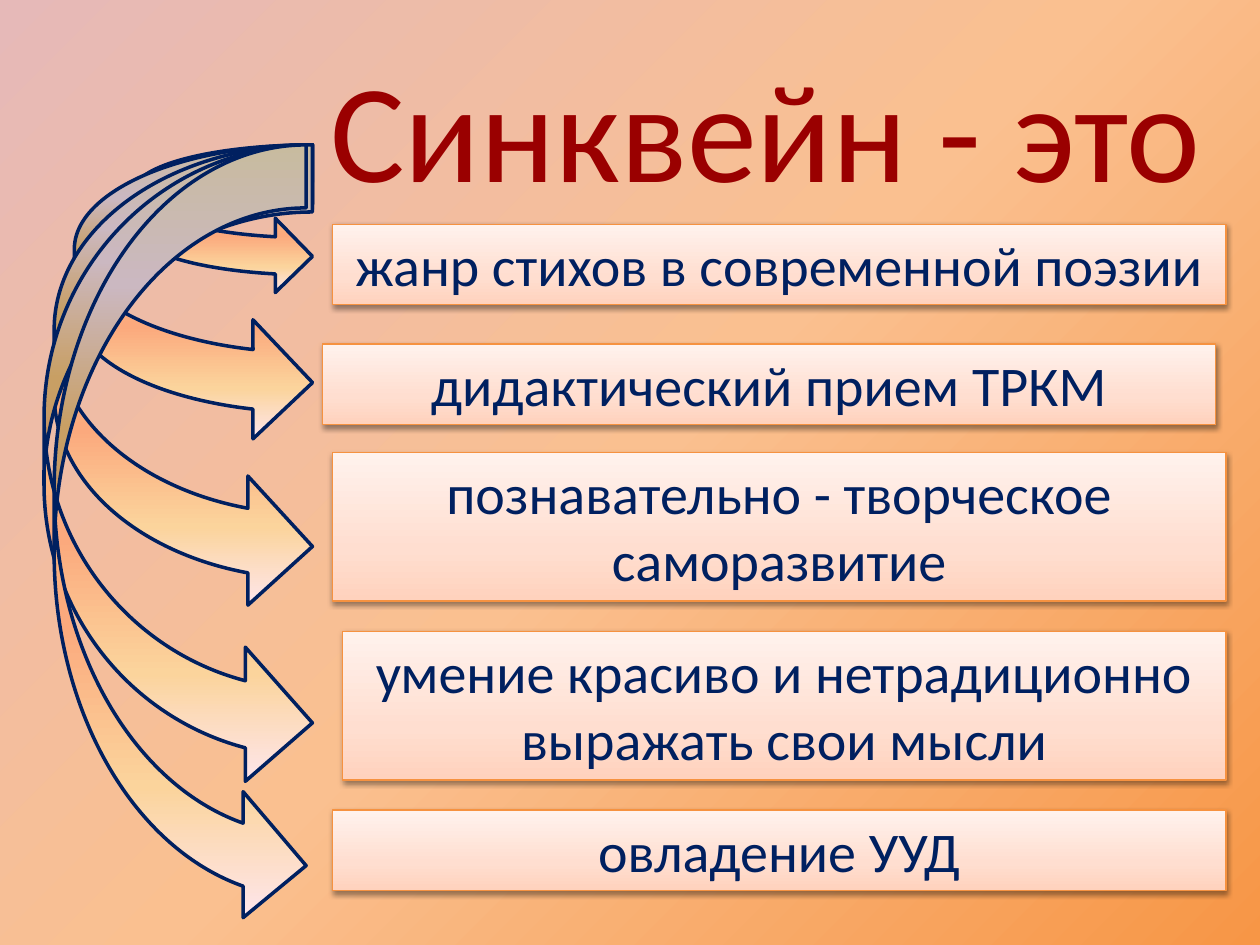
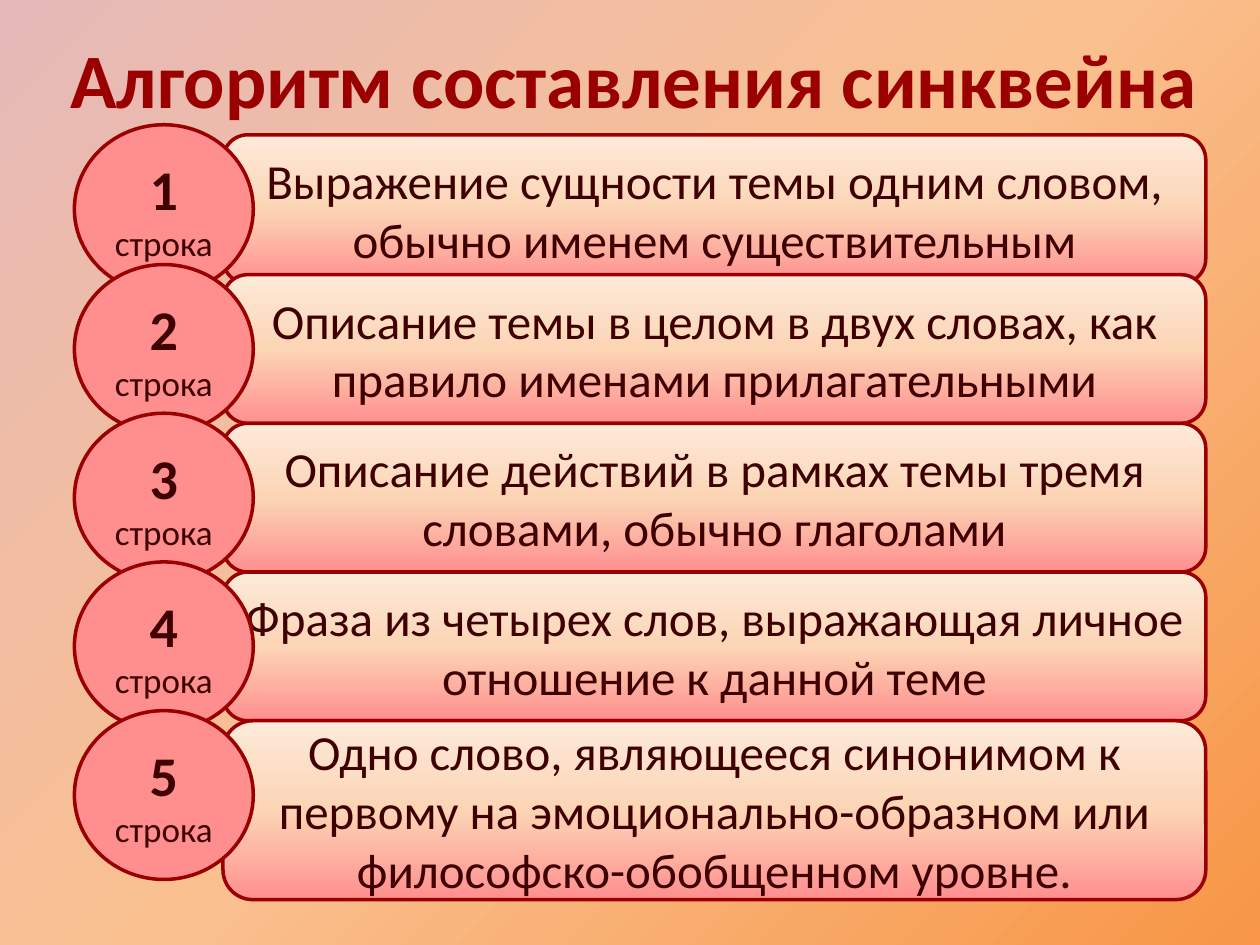
from lxml.etree import SubElement
from pptx import Presentation
from pptx.dml.color import RGBColor
from pptx.enum.shapes import MSO_SHAPE
from pptx.enum.text import MSO_ANCHOR, MSO_AUTO_SIZE, PP_ALIGN
from pptx.oxml.ns import qn
from pptx.util import Inches, Pt

DARK_RED, NAVY, BROWN, CORAL, ORANGE = "9A0000", "002060", "3E0000", "FF8F8F", "F69240"
BACKDROP = [(0, "F79646"), (50, "FAC090"), (100, "E6B9B8")]
ARROW_BLEND = [(0, "FBEAC7"), (18, "FEE7F2"), (36, "FAC77D"),
               (61, "FBA97D"), (82, "FBD49C"), (100, "FEE7F2")]
MEANING_BLEND = [(0, "FFD2BD"), (35, "FFDED0"), (100, "FFF2ED")]
RULE_BLEND = [(0, "FDEADA"), (50, "FCD5B5"), (100, CORAL)]

TITLE_LARGE = {"size": Pt(80), "bold": False}
TITLE_BOLD = {"size": Pt(44), "bold": True}
MEANING_FONT = {"size": Pt(32), "bold": False}
NUMBER_FONT = {"size": Pt(32), "bold": True}
CAPTION_FONT = {"size": Pt(20), "bold": False}
RULE_FONT = {"size": Pt(28), "bold": False}
GROWING = {"word_wrap": True, "vertical_anchor": MSO_ANCHOR.TOP,
           "auto_size": MSO_AUTO_SIZE.SHAPE_TO_FIT_TEXT}
CENTERED = {"word_wrap": True, "vertical_anchor": MSO_ANCHOR.MIDDLE}

ARROWS = [(1.06, 1.42, 1.18), (0.59, 1.89, 2.36), (0.43, 2.05, 3.7),
          (0.35, 2.13, 5.12), (0.43, 2, 6.22)]
MEANINGS = [
    (2.64, 1.78, 7.09, 0.64, "жанр стихов в современной поэзии"),
    (2.56, 2.73, 7.09, 0.64, "дидактический прием ТРКМ"),
    (2.64, 3.59, 7.09, 1.18, "познавательно - творческое саморазвитие"),
    (2.72, 5.01, 7.01, 1.18, "умение красиво и нетрадиционно выражать свои мысли"),
    (2.64, 6.43, 7.09, 0.64, "овладение УУД"),
]
RULES = [
    (1.07, 1.18, "Выражение сущности темы одним словом, обычно именем существительным"),
    (2.18, 1.18, "Описание темы в целом в двух словах, как правило именами прилагательными"),
    (3.36, 1.18, "Описание действий в рамках темы тремя словами, обычно глаголами"),
    (4.54, 1.18, "Фраза из четырех слов, выражающая личное отношение к данной теме"),
    (5.72, 1.42, "Одно слово, являющееся синонимом к первому на эмоционально-образном "
                 "или философско-обобщенном уровне."),
]


def paint(color_format, color):
    """Apply a hex colour."""
    color_format.rgb = RGBColor.from_string(color)


def apply(target, values):
    """Set every attribute in a dict of format values."""
    for name, value in values.items():
        setattr(target, name, value)


def blend(owner, fill, stops, angle=None):
    """Fill with a linear gradient, or a radial one from the lower right corner."""
    fill.gradient()
    gradient = next(owner.element.iter(qn("a:gradFill")))
    for part in list(gradient):
        gradient.remove(part)
    stop_list = SubElement(gradient, qn("a:gsLst"))
    for position, color in stops:
        stop = SubElement(stop_list, qn("a:gs"), pos=str(position * 1000))
        SubElement(stop, qn("a:srgbClr"), val=color)
    if angle is None:
        radial = SubElement(gradient, qn("a:path"), path="circle")
        SubElement(radial, qn("a:fillToRect"), l="100000", t="100000")
    else:
        SubElement(gradient, qn("a:lin"), ang=str(angle * 60000), scaled="0")


def cast_shadow(shape):
    """Add a soft shadow below a shape."""
    effects = shape.element.spPr.find(qn("a:effectLst"))
    shadow = SubElement(effects, qn("a:outerShdw"), blurRad="40000", dist="20000",
                        dir="5400000", rotWithShape="0")
    color = SubElement(shadow, qn("a:srgbClr"), val="000000")
    SubElement(color, qn("a:alpha"), val="38000")


def write(shape, lines, color, frame_format):
    """Write centred paragraphs given as pairs of text and font format."""
    frame = shape.text_frame
    apply(frame, frame_format)
    for index, (text, font_format) in enumerate(lines):
        paragraph = frame.add_paragraph() if index else frame.paragraphs[0]
        paragraph.alignment = PP_ALIGN.CENTER
        run = paragraph.add_run()
        run.text = text
        apply(run.font, {"name": "Calibri", **font_format})
        paint(run.font.color, color)


def add_title(slide, box, text, font_format):
    """Add a dark red title."""
    title = slide.shapes.add_textbox(*map(Inches, box))
    write(title, [(text, font_format)], DARK_RED, GROWING)


def add_outlined(shapes, kind, box, line_color, line_width=2):
    """Add a preset shape with an outline and no shadow."""
    shape = shapes.add_shape(kind, *map(Inches, box))
    shape.shadow.inherit = False
    paint(shape.line.color, line_color)
    shape.line.width = Pt(line_width)
    return shape


def add_arrow(slide, left, width, height):
    """Add a curved arrow that starts beside the title."""
    arrow = add_outlined(slide.shapes, MSO_SHAPE.CURVED_RIGHT_ARROW,
                         (left, 1.15, width, height), NAVY)
    blend(arrow, arrow.fill, ARROW_BLEND, 90)


def add_meaning(slide, box, text):
    """Add a box with one meaning of the term."""
    meaning = add_outlined(slide.shapes, MSO_SHAPE.RECTANGLE, box, ORANGE, 0.75)
    blend(meaning, meaning.fill, MEANING_BLEND, 270)
    cast_shadow(meaning)
    write(meaning, [(text, MEANING_FONT)], NAVY, GROWING)


def add_rule(slide, number, top, height, text):
    """Add a rule panel grouped with its numbered circle."""
    shapes = slide.shapes.add_group_shape().shapes
    panel = add_outlined(shapes, MSO_SHAPE.ROUNDED_RECTANGLE,
                         (1.77, top, 7.8, height), DARK_RED)
    blend(panel, panel.fill, RULE_BLEND, 90)
    write(panel, [(text, RULE_FONT)], BROWN, CENTERED)
    badge = add_outlined(shapes, MSO_SHAPE.OVAL, (0.59, top - 0.08, 1.42, 1.34), DARK_RED)
    badge.fill.solid()
    paint(badge.fill.fore_color, CORAL)
    write(badge, [(str(number), NUMBER_FONT), ("строка", CAPTION_FONT)], BROWN, CENTERED)


def main():
    """Build the definition slide and the algorithm slide."""
    prs = Presentation()
    prs.slide_width, prs.slide_height = Inches(10), Inches(7.5)
    master = prs.slide_master
    blend(master, master.background.fill, BACKDROP)
    blank = prs.slide_layouts[6]

    definition = prs.slides.add_slide(blank)
    add_title(definition, (2.16, 0.29, 7.84, 1.45), "Синквейн - это", TITLE_LARGE)
    for arrow, (*box, text) in zip(ARROWS, MEANINGS):
        add_arrow(definition, *arrow)
        add_meaning(definition, box, text)

    algorithm = prs.slides.add_slide(blank)
    add_title(algorithm, (0.35, 0.2, 9.37, 0.84), "Алгоритм составления синквейна", TITLE_BOLD)
    for number, rule in enumerate(RULES, start=1):
        add_rule(algorithm, number, *rule)

    prs.save("out.pptx")


if __name__ == "__main__":
    main()
